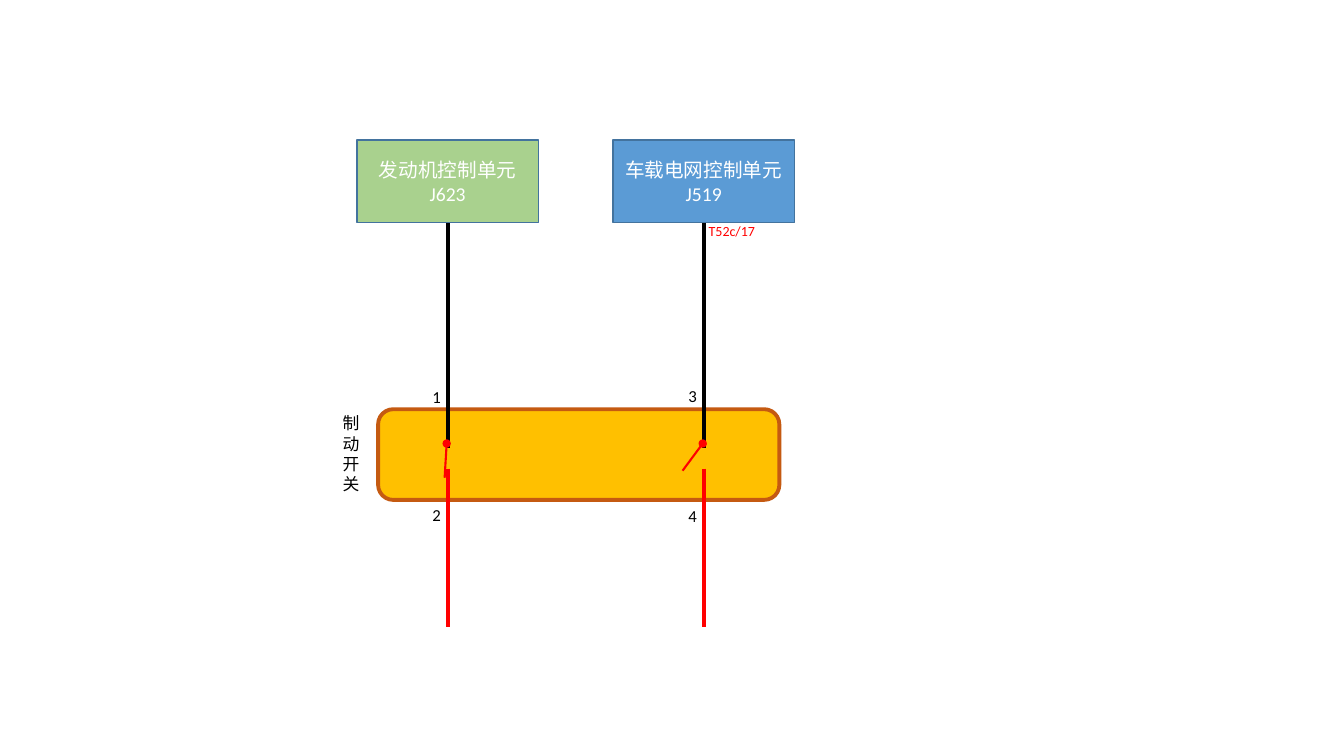
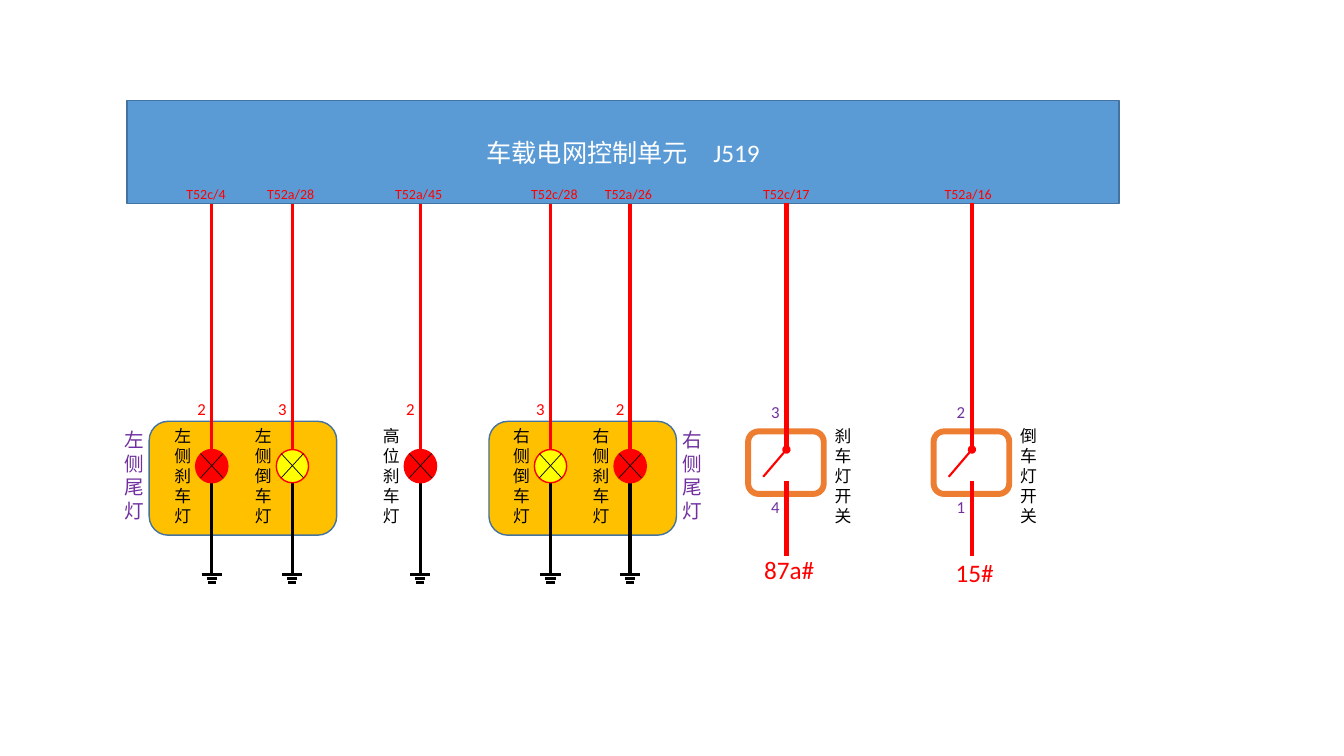
from lxml import etree
from pptx import Presentation
from pptx.dml.color import RGBColor
from pptx.enum import shapes, text
from pptx.oxml import ns
from pptx.util import Inches, Pt

COLORS = {
    "white": "FFFFFF", "black": "000000", "red": "FF0000", "yellow": "FFFF00",
    "amber": "FFC000", "brown": "C55A11", "orange": "ED7D31", "green": "A9D18E",
    "blue": "5B9BD5", "edge": "43739E", "purple": "7030A0",
}
FONT = "Calibri"
RECT = shapes.MSO_SHAPE.RECTANGLE
ROUND = shapes.MSO_SHAPE.ROUNDED_RECTANGLE
OVAL = shapes.MSO_SHAPE.OVAL

# Unit text, fill, wire x, lever tip, upper pin, lower pin
UNITS = [
    ("发动机控制单元J623", "green", 4.44, (4.41, 4.74), ("1", 3.79), ("2", 4.96)),
    ("车载电网控制单元J519", "blue", 6.98, (6.77, 4.67), ("3", 3.78), ("4", 4.97)),
]

# Wire x, name, terminal, terminal left, pin, fill
LAMPS = [
    (2.1, "左侧刹车灯", "T52c/4", 1.75, "2", "red"),
    (2.9, "左侧倒车灯", "T52a/28", 2.55, "3", "yellow"),
    (4.17, "高位刹车灯", "T52a/45", 3.82, "2", "red"),
    (5.46, "右侧倒车灯", "T52c/28", 5.17, "3", "yellow"),
    (6.25, "右侧刹车灯", "T52a/26", 5.9, "2", "red"),
]

# Wire x, name, terminal, terminal left, pins, supply, supply place
SWITCHES = [
    (7.8, "刹车灯开关", "T52c/17", 7.47, ("3", "4"), "87a#", (7.48, 5.45)),
    (9.64, "倒车灯开关", "T52a/16", 9.27, ("2", "1"), "15#", (9.38, 5.48)),
]

# Housing left, name, name left
HOUSINGS = [(1.48, "左侧尾灯", 1.14), (4.85, "右侧尾灯", 6.67)]

GROUND = [(5.7, 0.1), (5.74, 0.05), (5.78, 0.04)]


def rgb(name):
    return RGBColor.from_string(COLORS[name])


def style(frame, words, size, color):
    frame.text = words
    frame.word_wrap = True
    font = frame.paragraphs[0].runs[0].font
    font.size, font.name = Pt(size), FONT
    font.color.rgb = rgb(color)


def label(slide, left, top, width, height, words, size=12, color="black"):
    box = slide.shapes.add_textbox(*map(Inches, (left, top, width, height)))
    style(box.text_frame, words, size, color)


def block(parent, kind, place, fill, edge="edge", weight=1, words=None, size=14):
    shape = parent.shapes.add_shape(kind, *map(Inches, place))
    shape.shadow.inherit = False
    if fill:
        shape.fill.solid()
        shape.fill.fore_color.rgb = rgb(fill)
    else:
        shape.fill.background()
    shape.line.color.rgb = rgb(edge)
    shape.line.width = Pt(weight)
    if words:
        style(shape.text_frame, words, size, "white")
        shape.text_frame.vertical_anchor = text.MSO_ANCHOR.MIDDLE
        shape.text_frame.paragraphs[0].alignment = text.PP_ALIGN.CENTER
    return shape


def wire(parent, start, end, color="black", weight=3.0, dot=False):
    line = parent.shapes.add_connector(
        shapes.MSO_CONNECTOR.STRAIGHT, *map(Inches, (*start, *end)))
    line.line.color.rgb = rgb(color)
    line.line.width = Pt(weight)
    if dot:
        tail = etree.SubElement(line.line._get_or_add_ln(), ns.qn("a:tailEnd"))
        tail.set("type", "oval")
    etree.SubElement(line._element.spPr, ns.qn("a:effectLst"))
    return line


def lever(slide, tip, pivot):
    wire(slide, tip, pivot, "red", 1.5, dot=True)


def bulb(slide, x, fill):
    group = slide.shapes.add_group_shape()
    block(group, OVAL, (x - 0.16, 4.46, 0.32, 0.33), fill, "red")
    for side in (-0.11, 0.11):
        wire(group, (x + side, 4.5), (x - side, 4.74), weight=0.5)


def ground(slide, x):
    group = slide.shapes.add_group_shape()
    for y, half in GROUND:
        wire(group, (x - half, y), (x + half, y), weight=2.25)


def brake(slide):
    block(slide, ROUND, (3.75, 4.06, 3.98, 0.9), "amber", "brown", 2.75)
    for words, fill, x, tip, upper, lower in UNITS:
        unit = block(slide, RECT, (x - 0.9, 1.39, 1.8, 0.82), fill, words=words)
        wire(slide, (x, 2.21), (x, 4.44)).begin_connect(unit, 2)
        lever(slide, tip, (x - 0.01, 4.4))
        wire(slide, (x, 4.65), (x, 6.22), "red")
        for pin, top in (upper, lower):
            label(slide, x - 0.25, top, 0.28, 0.3, pin)
    label(slide, 3.3, 4.05, 0.31, 0.91, "制动开关")
    label(slide, 6.93, 2.16, 0.71, 0.26, "T52c/17", 10, "red")


def lights(slide):
    for left, name, side in HOUSINGS:
        block(slide, ROUND, (left, 4.18, 1.86, 1.13), "amber")
        label(slide, side, 4.2, 0.23, 1.03, name, 14, "purple")
    block(slide, RECT, (1.26, 1, 9.84, 1.02), "blue",
          words="车载电网控制单元　J519", size=18)
    for x, name, port, left, pin, fill in LAMPS:
        wire(slide, (x, 4.75), (x, 5.7), weight=2.5)
        bulb(slide, x, fill)
        ground(slide, x)
        wire(slide, (x, 2.02), (x, 4.46), "red", 2.5)
        label(slide, left, 1.79, 0.71, 0.26, port, 10, "red")
        label(slide, x - 0.47, 4.17, 0.21, 1.11, name)
        label(slide, x - 0.24, 3.91, 0.24, 0.27, pin, color="red")
    for x, name, port, left, pins, feed, place in SWITCHES:
        block(slide, ROUND, (x - 0.38, 4.28, 0.75, 0.62), None, "orange", 4.25)
        wire(slide, (x, 4.77), (x, 5.52), "red")
        wire(slide, (x, 2.01), (x, 4.45), "red")
        lever(slide, (x - 0.23, 4.73), (x, 4.46))
        label(slide, left, 1.79, 0.71, 0.26, port, 10, "red")
        label(slide, x + 0.38, 4.17, 0.38, 0.86, name)
        for pin, top in zip(pins, (3.94, 4.88)):
            label(slide, x - 0.25, top, 0.26, 0.27, pin, color="purple")
        label(slide, *place, 0.79, 0.29, feed, 18, "red")


def main():
    deck = Presentation()
    deck.slide_width, deck.slide_height = Inches(13.33), Inches(7.5)
    for draw in (brake, lights):
        draw(deck.slides.add_slide(deck.slide_layouts[6]))
    deck.save("out.pptx")


if __name__ == "__main__":
    main()
